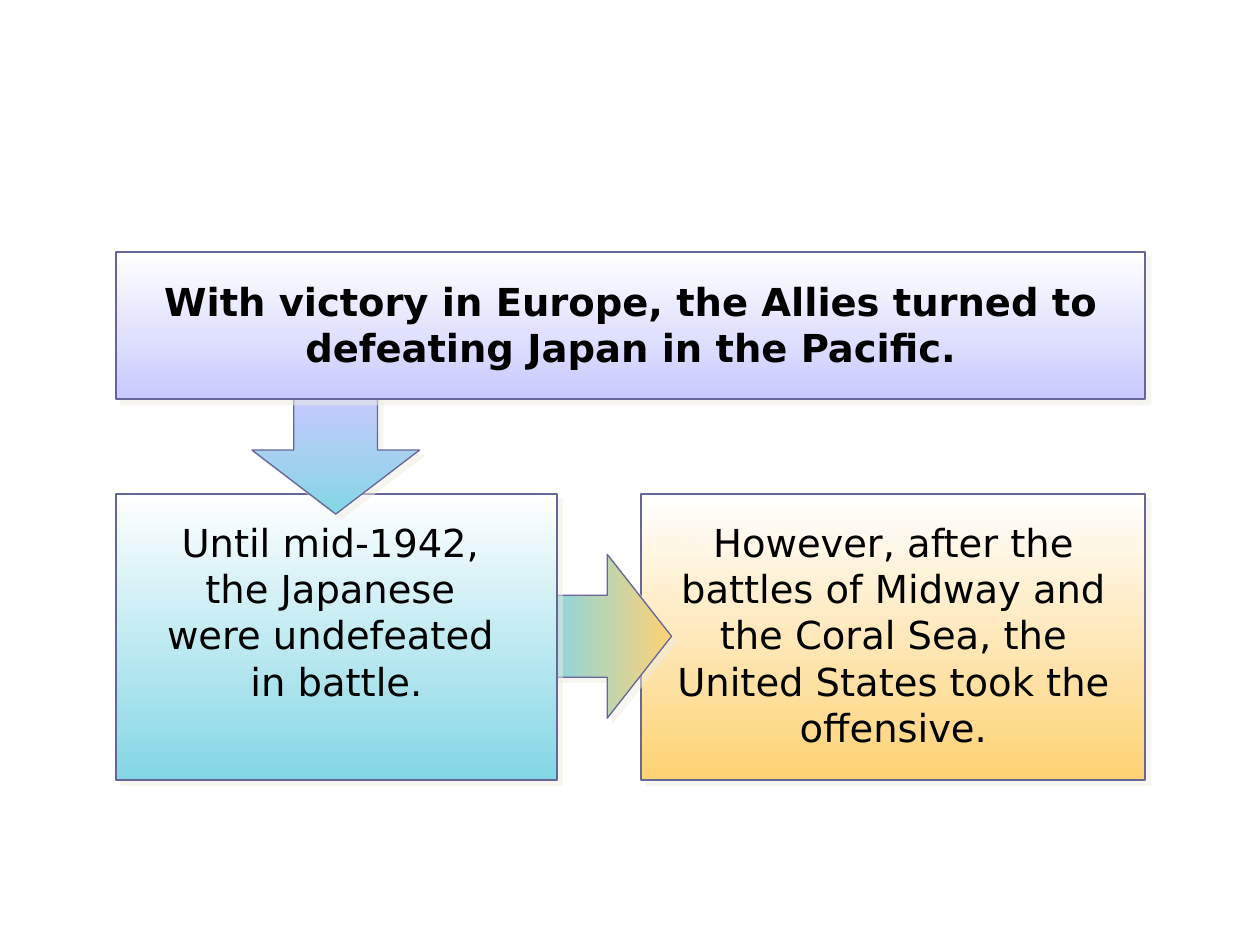
from lxml import etree
from pptx import Presentation
from pptx import util as u
from pptx.dml.color import RGBColor
from pptx.enum import shapes, text
from pptx.oxml.ns import qn

COLORS = {
    "white": "FFFFFF",
    "lavender": "C9C9FF",
    "teal": "83D7E5",
    "amber": "FED273",
    "outline": "666699",
    "shadow": "EEECE1",
    "text": "000000",
}
FONT = "DejaVu Sans"
DOWN, RIGHT = 270, 0  # gradient directions, counter-clockwise degrees


def color(name):
    return RGBColor.from_string(COLORS[name])


def add_shadow(shape):
    """Soft-coloured shadow falling to the lower right."""
    shape.shadow.inherit = False
    effects = shape._element.spPr.find(qn("a:effectLst"))
    shadow = etree.SubElement(effects, qn("a:outerShdw"), dist=str(u.Pt(4.2)),
                              dir="2700000", algn="ctr", rotWithShape="0")
    tone = etree.SubElement(shadow, qn("a:srgbClr"), val=COLORS["shadow"])
    etree.SubElement(tone, qn("a:alpha"), val="50000")


def add_gradient_shape(parent, kind, box, start, end, angle, line_width):
    shape = parent.add_shape(kind, *map(u.Inches, box))
    shape.fill.gradient()
    shape.fill.gradient_angle = angle
    for stop, name in zip(shape.fill.gradient_stops, (start, end)):
        stop.color.rgb = color(name)
    shape.line.color.rgb = color("outline")
    shape.line.width = u.Pt(line_width)
    add_shadow(shape)
    return shape


def add_panel(slide, box, end, words, inset, text_height, bold=False):
    """A panel with its text box, grouped; inset is (left, top)."""
    left, top, width, _ = box
    group = slide.shapes.add_group_shape().shapes
    add_gradient_shape(group, shapes.MSO_SHAPE.RECTANGLE, box, "white", end, DOWN, 1)

    text_box = group.add_textbox(
        u.Inches(left + inset[0]), u.Inches(top + inset[1]),
        u.Inches(width - 2 * inset[0]), u.Inches(text_height))
    frame = text_box.text_frame
    frame.word_wrap = True
    frame.auto_size = text.MSO_AUTO_SIZE.SHAPE_TO_FIT_TEXT
    paragraph = frame.paragraphs[0]
    paragraph.text = words
    paragraph.alignment = text.PP_ALIGN.CENTER
    for run in paragraph.runs:
        run.font.name = FONT
        run.font.size = u.Pt(22)
        run.font.bold = bold
        run.font.color.rgb = color("text")


def add_arrow(slide, kind, box, start, end, angle, head):
    arrow = add_gradient_shape(slide.shapes, kind, box, start, end, angle, 0.75)
    arrow.adjustments[0] = 0.5
    arrow.adjustments[1] = head


def build_flow(slide, box):
    """Heading panel above two panels, linked by arrows."""
    left, top, width, height = box
    heading_height, panel_height = 1.17, 2.27
    cause_width, result_width = 3.5, 4
    panel_top = top + height - panel_height
    result_left = left + width - result_width

    # Result panel and the arrow leading to it
    add_panel(slide, (result_left, panel_top, result_width, panel_height), "amber",
              "However, after the battles of Midway and the Coral Sea, "
              "the United States took the offensive.", (0.1, 0.15), 1.93)
    add_arrow(slide, shapes.MSO_SHAPE.RIGHT_ARROW,
              (left + cause_width - 0.09, panel_top + 0.48, 1, 1.3),
              "teal", "amber", RIGHT, 0.51)

    # Situation panel and the arrow leading to it
    add_panel(slide, (left, panel_top, cause_width, panel_height), "teal",
              "Until mid-1942, \nthe Japanese \nwere undefeated \nin battle.",
              (0.1, 0.15), 1.57)
    add_arrow(slide, shapes.MSO_SHAPE.DOWN_ARROW,
              (left + 1.08, top + heading_height - 0.03, 1.33, 0.94),
              "lavender", "teal", DOWN, 0.54)

    # Heading panel
    add_panel(slide, (left, top, width, heading_height), "lavender",
              "With victory in Europe, the Allies turned to defeating Japan "
              "in the Pacific.", (0.17, 0.16), 0.83, bold=True)


def main():
    presentation = Presentation()
    presentation.slide_width = u.Inches(10)
    presentation.slide_height = u.Inches(7.5)
    slide = presentation.slides.add_slide(presentation.slide_layouts[6])
    build_flow(slide, (0.92, 2, 8.17, 4.19))
    presentation.save("out.pptx")


if __name__ == "__main__":
    main()
